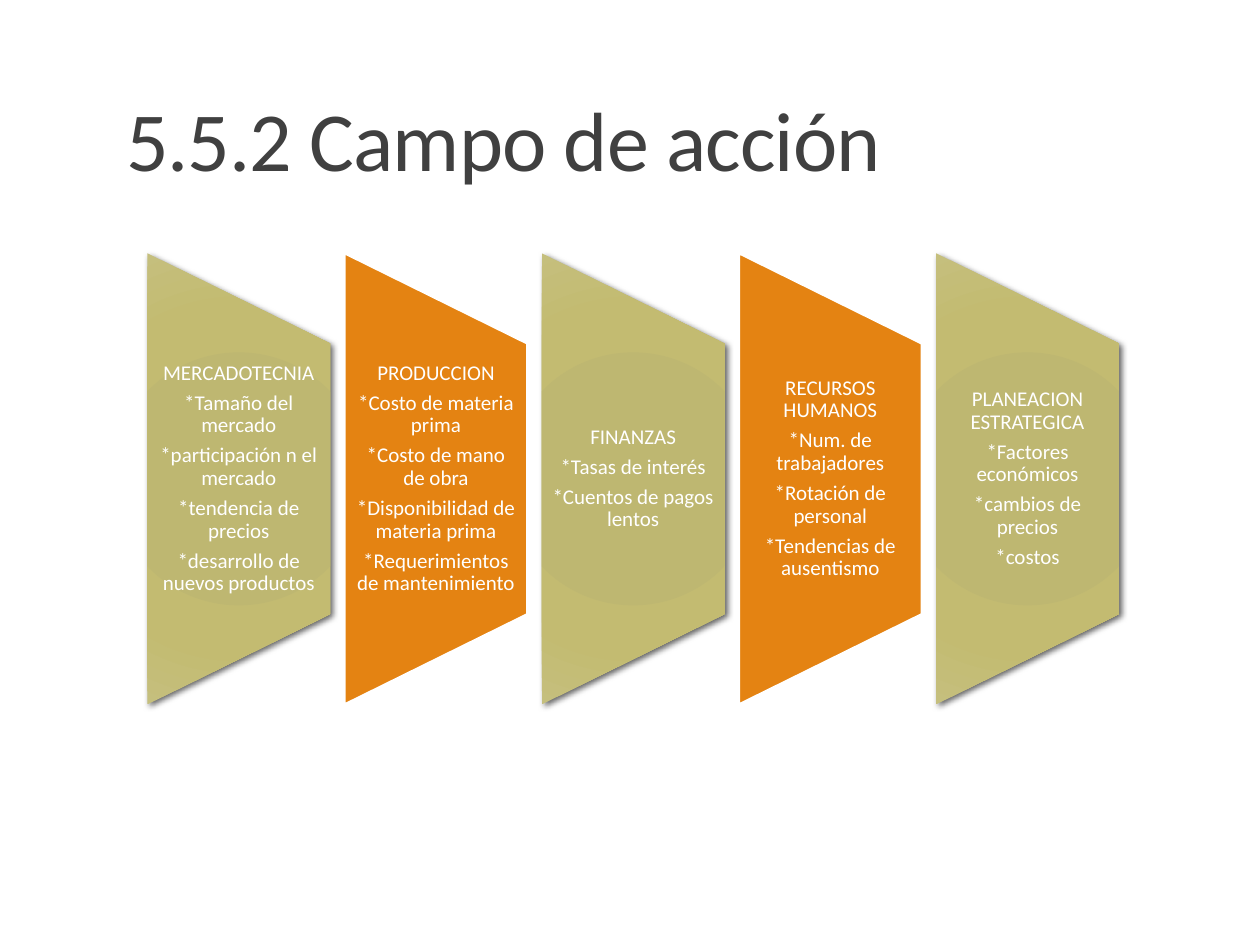
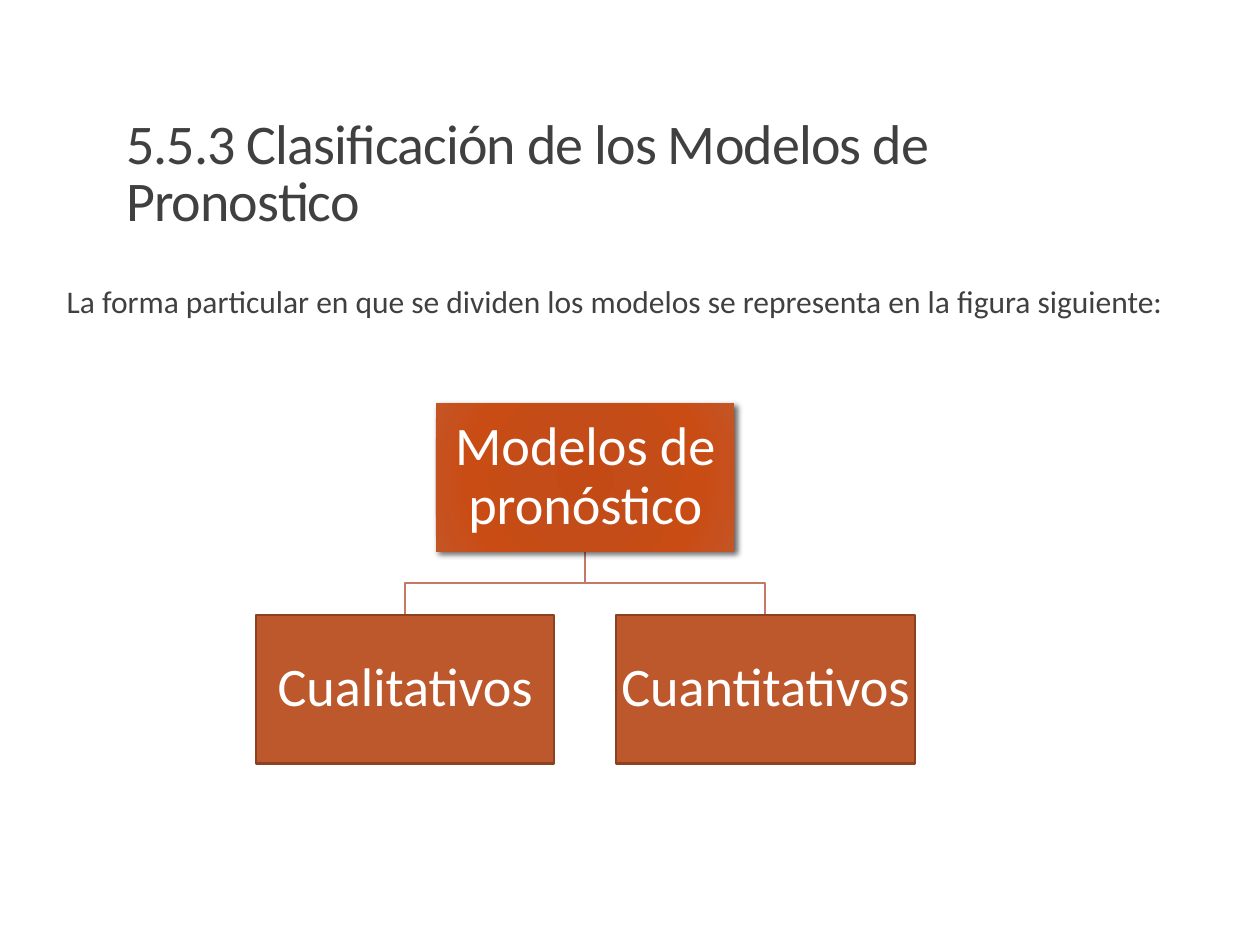
import pptx
import pptx.dml.color
import pptx.enum.shapes
import pptx.enum.text
import pptx.oxml
import pptx.oxml.ns
import pptx.util
from dataclasses import dataclass
from typing import Optional

Inches = pptx.util.Inches
Pt = pptx.util.Pt
SHAPE = pptx.enum.shapes.MSO_SHAPE
ANCHOR = pptx.enum.text.MSO_ANCHOR
ALIGN = pptx.enum.text.PP_ALIGN


# Theme: colours, type sizes and line width
@dataclass(frozen=True)
class Theme:
    font: str = "Calibri"
    ink: str = "404040"
    white: str = "FFFFFF"
    title_size: int = 48
    long_title_size: int = 32
    body_size: int = 18
    column_size: int = 12
    node_size: int = 31
    line_width: float = 1.25
    branch: str = "C57864"


THEME = Theme()


@dataclass(frozen=True)
class Style:
    """Flat fill with an outline, or a radial gradient with a shadow."""
    colors: tuple[str, ...]
    line: Optional[str] = None


OLIVE = Style(("BEB76E", "BEB771", "C3BB71", "C5BF7D"))
ORANGE = Style(("E48312",), THEME.white)
GLOWING_RUST = Style(("C44A15", "C34C18", "C94C15", "C45525"))
RUST = Style(("BD582C",), "8C4121")
GRADIENT_STOPS = (0, 34, 70, 100)


@dataclass(frozen=True)
class Box:
    x: float
    y: float
    w: float
    h: float

    @property
    def center(self) -> float:
        return self.x + self.w / 2

    @property
    def bottom(self) -> float:
        return self.y + self.h

    def emu(self) -> tuple:
        return tuple(Inches(v) for v in (self.x, self.y, self.w, self.h))


@dataclass(frozen=True)
class Node:
    text: str
    box: Box
    style: Style


# Slide content
COLUMNS = [
    ("MERCADOTECNIA", "*Tamaño del mercado", "*participación n el mercado",
     "*tendencia de precios", "*desarrollo de nuevos productos"),
    ("PRODUCCION", "*Costo de materia prima", "*Costo de mano de obra",
     "*Disponibilidad de materia prima", "*Requerimientos de mantenimiento"),
    ("FINANZAS", "*Tasas de interés", "*Cuentos de pagos lentos"),
    ("RECURSOS HUMANOS", "*Num. de trabajadores", "*Rotación de personal",
     "*Tendencias de ausentismo"),
    ("PLANEACION ESTRATEGICA", "*Factores económicos", "*cambios de precios",
     "*costos"),
]
FIRST_COLUMN, LAST_COLUMN = 1.17, 7.43
COLUMN_W, COLUMN_H, COLUMN_MIDDLE = 1.45, 3.58, 3.8
COLUMN_TEXT_H = 2.15

NODE_W, NODE_H = 2.37, 1.18
ROOT = Node("Modelos de pronóstico", Box(3.46, 3.2, NODE_W, NODE_H), GLOWING_RUST)
CHILDREN = [
    Node(text, Box(x, 4.88, NODE_W, NODE_H), RUST)
    for text, x in (("Cualitativos", 2.03), ("Cuantitativos", 4.89))
]


# Shared drawing functions
def rgb(color: str) -> pptx.dml.color.RGBColor:
    return pptx.dml.color.RGBColor.from_string(color)


def write(shape, lines: tuple[str, ...], size: int, color: str,
          align=ALIGN.LEFT, anchor=ANCHOR.TOP, spacing: float = 0.9,
          after: float = 0, margins: tuple[float, float] = (0.1, 0.05)) -> None:
    tf = shape.text_frame
    tf.word_wrap = True
    tf.auto_size = pptx.enum.text.MSO_AUTO_SIZE.NONE
    tf.vertical_anchor = anchor
    tf.margin_left = tf.margin_right = Inches(margins[0])
    tf.margin_top = tf.margin_bottom = Inches(margins[1])
    for i, line in enumerate(lines):
        p = tf.paragraphs[0] if i == 0 else tf.add_paragraph()
        p.text = line
        p.alignment = align
        p.line_spacing = spacing
        p.space_after = Pt(after)
        p.font.name = THEME.font
        p.font.size = Pt(size)
        p.font.color.rgb = rgb(color)


def add_titled_slide(prs, text: str, size: int, top: float):
    slide = prs.slides.add_slide(prs.slide_layouts[5])
    title = slide.shapes.title
    title.left, title.top, title.width, title.height = Box(0.9, top, 8.25, 1.59).emu()
    write(title, (text,), size, THEME.ink, anchor=ANCHOR.BOTTOM, spacing=0.85)
    # Tighten the letter spacing by half a point
    p = title.text_frame.paragraphs[0]
    p._p.get_or_add_pPr().get_or_add_defRPr().set("spc", "-50")
    return slide


def apply_style(sp, style: Style) -> None:
    sp.shadow.inherit = False
    if style.line:
        sp.fill.solid()
        sp.fill.fore_color.rgb = rgb(style.colors[0])
        sp.line.color.rgb = rgb(style.line)
        sp.line.width = Pt(THEME.line_width)
        return
    sp.line.fill.background()
    ns = pptx.oxml.ns.nsdecls("a")
    stops = "".join(
        f'<a:gs pos="{pos * 1000}"><a:srgbClr val="{color}"/></a:gs>'
        for pos, color in zip(GRADIENT_STOPS, style.colors))
    gradient = pptx.oxml.parse_xml(
        f'<a:gradFill {ns} rotWithShape="1"><a:gsLst>{stops}</a:gsLst>'
        '<a:path path="circle"><a:fillToRect l="100000" t="100000" '
        'r="100000" b="100000"/></a:path></a:gradFill>')
    shadow = pptx.oxml.parse_xml(
        f'<a:outerShdw {ns} blurRad="{Pt(3.5)}" dist="{Pt(2)}" dir="2700000" '
        'algn="br" rotWithShape="0"><a:srgbClr val="000000">'
        '<a:alpha val="60000"/></a:srgbClr></a:outerShdw>')
    spPr = sp._element.spPr
    spPr.find(pptx.oxml.ns.qn("a:prstGeom")).addnext(gradient)
    spPr.find(pptx.oxml.ns.qn("a:effectLst")).append(shadow)


def add_column(slide, left: float, lines: tuple[str, ...], style: Style) -> None:
    # The trapezoid lies on its side, so its box is turned about its centre
    center = left + COLUMN_W / 2
    body = Box(center - COLUMN_H / 2, COLUMN_MIDDLE - COLUMN_W / 2, COLUMN_H, COLUMN_W)
    sp = slide.shapes.add_shape(SHAPE.FLOWCHART_MANUAL_OPERATION, *body.emu())
    sp.rotation = 270
    apply_style(sp, style)
    label = Box(left, COLUMN_MIDDLE - COLUMN_TEXT_H / 2, COLUMN_W, COLUMN_TEXT_H)
    write(slide.shapes.add_textbox(*label.emu()), lines, THEME.column_size,
          THEME.white, ALIGN.CENTER, ANCHOR.MIDDLE, after=4.2, margins=(0.08, 0))


def add_node(slide, node: Node) -> None:
    sp = slide.shapes.add_shape(SHAPE.RECTANGLE, *node.box.emu())
    apply_style(sp, node.style)
    write(sp, (node.text,), THEME.node_size, THEME.white, ALIGN.CENTER,
          ANCHOR.MIDDLE, margins=(0.02, 0.02))


def add_branch(slide, parent: Box, child: Box) -> None:
    middle = (parent.bottom + child.y) / 2
    points = [(parent.center, parent.bottom), (parent.center, middle),
              (child.center, middle), (child.center, child.y)]
    start, *rest = [(Inches(x), Inches(y)) for x, y in points]
    builder = slide.shapes.build_freeform(*start)
    builder.add_line_segments(rest, close=False)
    sp = builder.convert_to_shape()
    sp.shadow.inherit = False
    sp.fill.background()
    sp.line.color.rgb = rgb(THEME.branch)
    sp.line.width = Pt(THEME.line_width)


# Slides
def build_fields(prs) -> None:
    slide = add_titled_slide(prs, "5.5.2 Campo de acción", THEME.title_size, -0.04)
    pitch = (LAST_COLUMN - FIRST_COLUMN) / (len(COLUMNS) - 1)
    for i, lines in enumerate(COLUMNS):
        add_column(slide, FIRST_COLUMN + i * pitch, lines, (OLIVE, ORANGE)[i % 2])


def build_models(prs) -> None:
    slide = add_titled_slide(prs, "5.5.3 Clasificación de los Modelos de Pronostico",
                             THEME.long_title_size, 0.31)
    intro = slide.shapes.add_textbox(*Box(0.53, 2.22, 9, 0.74).emu())
    write(intro, ("La forma particular en que se dividen los modelos se representa "
                  "en la figura siguiente:",),
          THEME.body_size, THEME.ink, after=2, margins=(0, 0.05))
    for child in CHILDREN:
        add_branch(slide, ROOT.box, child.box)
    for node in (ROOT, *CHILDREN):
        add_node(slide, node)


def main() -> None:
    prs = pptx.Presentation()
    prs.slide_width, prs.slide_height = Inches(10), Inches(7.5)
    build_fields(prs)
    build_models(prs)
    prs.save("out.pptx")


if __name__ == "__main__":
    main()
